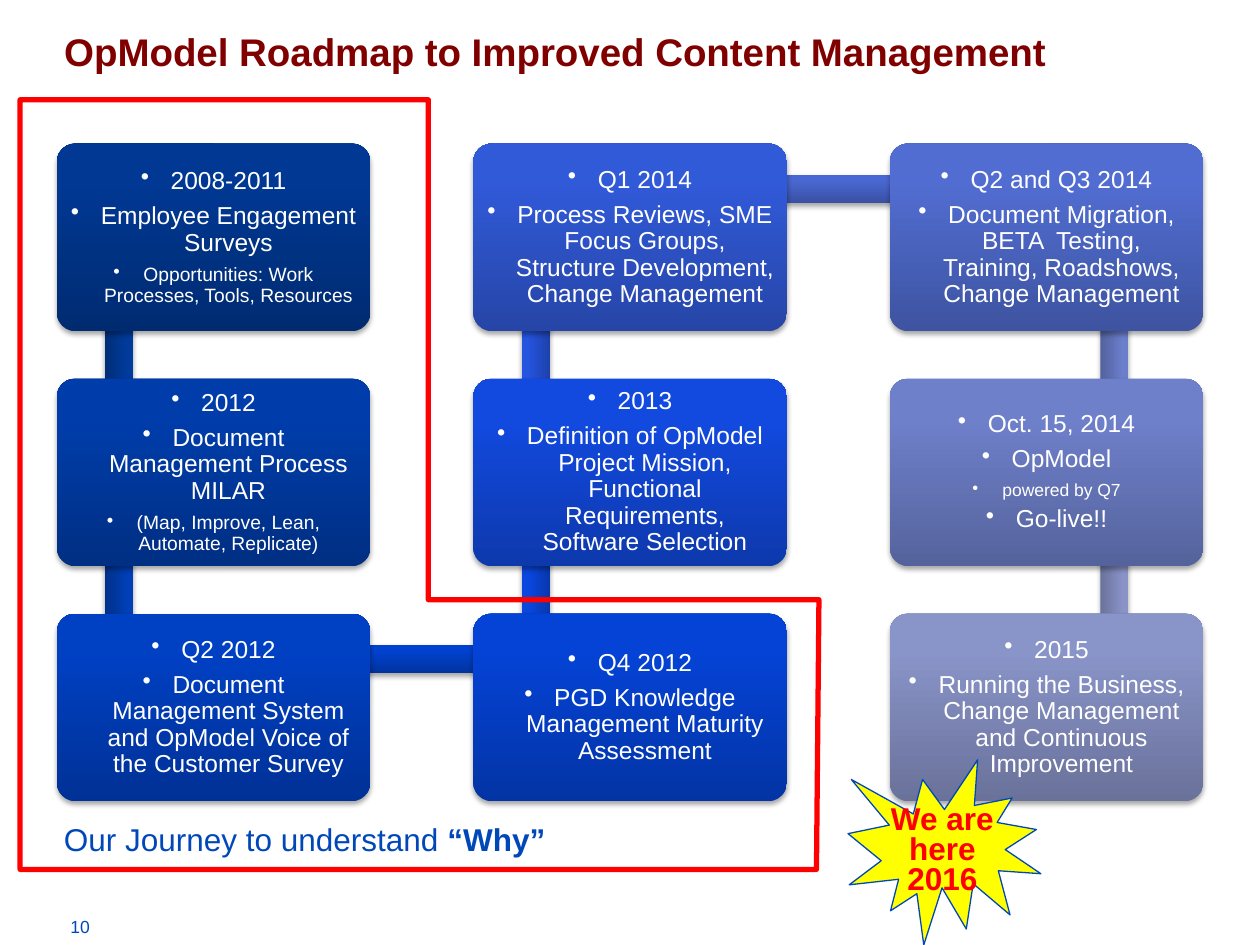
"""Build the roadmap slide of linked steps, a red outline and a star."""
import dataclasses
import typing

import lxml.etree
import pptx
import pptx.dml.color
import pptx.enum.shapes
import pptx.enum.text
import pptx.oxml.ns
import pptx.util

Pt = pptx.util.Pt
Kind = pptx.enum.shapes.MSO_SHAPE
Align = pptx.enum.text.PP_ALIGN
qn = pptx.oxml.ns.qn


@dataclasses.dataclass(frozen=True)
class Theme:
    font: str = "Arial"
    white: str = "FFFFFF"
    maroon: str = "800000"
    blue: str = "0048B9"
    red: str = "FF0000"
    yellow: str = "FFFF00"
    title: int = 22
    large: int = 18
    body: int = 14
    small: int = 11
    tiny: int = 10


THEME = Theme()
LEFT, TOP = 32.4, 82
ACROSS, DOWN = 238, 134.3
WIDE, HIGH = 179.3, 107.3
THICK = 16


class Line(typing.NamedTuple):
    text: str
    size: int = THEME.body


class Step(typing.NamedTuple):
    col: int
    row: int
    dark: str
    light: str
    lines: tuple[Line, ...]


class Bar(typing.NamedTuple):
    x: float
    y: float
    long: float
    turn: int
    dark: str
    light: str


BARS = (
    Bar(68, 175.7, 133.2, 90, "002E77", "003B9B"),
    Bar(68, 309.6, 133.2, 90, "00318B", "003FB5"),
    Bar(188, 376.6, 237.6, 0, "00339F", "0042CF"),
    Bar(306.4, 309.6, 133.2, 270, "0837AC", "0A47DF"),
    Bar(306.4, 175.7, 133.2, 270, "1D41AB", "2554DE"),
    Bar(425.5, 108, 237.6, 0, "3950A3", "4A68D3"),
    Bar(636.8, 181.4, 133.2, 90, "53619D", "6B7ECC"),
    Bar(636.8, 311, 133.2, 90, "6A719A", "8993C8"),
)

STEPS = (
    Step(0, 0, "002B71", "003893", (
        Line("2008-2011"), Line("Employee Engagement Surveys"),
        Line("Opportunities: Work Processes, Tools, Resources", THEME.small))),
    Step(0, 1, "002F83", "003DAB", (
        Line("2012"), Line("Document Management Process MILAR"),
        Line("(Map, Improve, Lean, Automate, Replicate)", THEME.small))),
    Step(0, 2, "003196", "0040C3", (
        Line("Q2 2012"),
        Line("Document Management System and OpModel Voice of the Customer Survey"))),
    Step(1, 2, "0334A5", "0443D6", (
        Line("Q4 2012"), Line("PGD Knowledge Management Maturity Assessment"))),
    Step(1, 1, "0E39AD", "124AE0", (
        Line("2013"),
        Line("Definition of OpModel Project Mission, Functional Requirements, "
             "Software Selection"))),
    Step(1, 0, "2645A7", "315AD9", (
        Line("Q1 2014"),
        Line("Process Reviews, SME Focus Groups, Structure Development, "
             "Change Management"))),
    Step(2, 0, "3E54A1", "516DD1", (
        Line("Q2 and Q3 2014"),
        Line("Document Migration, BETA  Testing, Training, Roadshows, "
             "Change Management"))),
    Step(2, 1, "55639C", "6F80CB", (
        Line("Oct. 15, 2014"), Line("OpModel"),
        Line("powered by Q7", THEME.tiny), Line("Go-live!!"))),
    Step(2, 2, "6A729A", "8994C8", (
        Line("2015"),
        Line("Running the Business, Change Management and Continuous Improvement"))),
)

EDGE = ((11.5, 57), (244.8, 57), (244.8, 342.7), (468, 342.7), (466.6, 496.8),
        (11.5, 496.8))


def color(code: str) -> pptx.dml.color.RGBColor:
    """Turn a hex code into a colour."""
    return pptx.dml.color.RGBColor.from_string(code)


def style(para, size: int, code: str, bold: bool = False) -> None:
    """Format every run of a paragraph."""
    for run in para.runs:
        font = run.font
        font.name, font.size, font.bold = THEME.font, Pt(size), bold
        font.color.rgb = color(code)


def shade(shape, dark: str, light: str) -> None:
    """Give a shape a rising gradient and a soft shadow."""
    shape.fill.gradient()
    shape.fill.gradient_angle = 90
    for stop, code, place in zip(shape.fill.gradient_stops, (dark, light), (0, 0.8)):
        stop.color.rgb = color(code)
        stop.position = place
    shape.line.fill.background()
    shape.shadow.inherit = False
    effects = shape._element.spPr.find(qn("a:effectLst"))
    outer = lxml.etree.SubElement(
        effects, qn("a:outerShdw"), blurRad=str(Pt(3.1)), dist=str(Pt(1.8)),
        dir="5400000", rotWithShape="0")
    black = lxml.etree.SubElement(outer, qn("a:srgbClr"), val="000000")
    lxml.etree.SubElement(black, qn("a:alpha"), val="35000")


def link(shapes, bar: Bar) -> None:
    """Draw one bar around its centre."""
    shape = shapes.add_shape(
        Kind.RECTANGLE, Pt(bar.x - bar.long / 2), Pt(bar.y - THICK / 2),
        Pt(bar.long), Pt(THICK))
    shape.rotation = bar.turn
    shade(shape, bar.dark, bar.light)


def card(shapes, step: Step) -> None:
    """Draw one step with its bulleted lines."""
    shape = shapes.add_shape(
        Kind.ROUNDED_RECTANGLE, Pt(LEFT + step.col * ACROSS),
        Pt(TOP + step.row * DOWN), Pt(WIDE), Pt(HIGH))
    shape.adjustments[0] = 0.1
    shade(shape, step.dark, step.light)
    frame = shape.text_frame
    frame.word_wrap = True
    frame.vertical_anchor = pptx.enum.text.MSO_ANCHOR.MIDDLE
    frame.margin_left = frame.margin_right = Pt(4.2)
    frame.margin_top = frame.margin_bottom = Pt(4.2)
    frame.text = "\n".join(line.text for line in step.lines)
    for para, line in zip(frame.paragraphs, step.lines):
        props = para._p.get_or_add_pPr()
        props.set("marL", str(Pt(17.1)))
        props.set("indent", str(-Pt(17.1)))
        lxml.etree.SubElement(props, qn("a:buChar"), char="•")
        para.alignment = Align.CENTER
        para.line_spacing = 0.9
        para.space_after = Pt(0.35 * line.size)
        style(para, line.size, THEME.white)


def label(shapes, box: tuple[float, ...], text: str, size: int, code: str,
          bold: bool = False, align=Align.LEFT, lead: float = 0.8):
    """Add a wrapped text box and return its paragraph."""
    frame = shapes.add_textbox(*map(Pt, box)).text_frame
    frame.word_wrap = True
    frame.text = text
    para = frame.paragraphs[0]
    para.alignment, para.line_spacing = align, lead
    style(para, size, code, bold)
    return para


def head(shape) -> None:
    """Place and format the title."""
    shape.left, shape.top, shape.width, shape.height = map(Pt, (29.5, 17.3, 650, 28.8))
    frame = shape.text_frame
    frame.text = "OpModel Roadmap to Improved Content Management"
    frame.word_wrap = True
    frame.auto_size = pptx.enum.text.MSO_AUTO_SIZE.NONE
    frame.vertical_anchor = pptx.enum.text.MSO_ANCHOR.TOP
    para = frame.paragraphs[0]
    para.alignment, para.line_spacing = Align.LEFT, 0.8
    style(para, THEME.title, THEME.maroon, True)


def outline(shapes) -> None:
    """Draw the red outline around the first steps."""
    first, *rest = [(Pt(x), Pt(y)) for x, y in EDGE]
    pen = shapes.build_freeform(*first)
    pen.add_line_segments(rest, close=True)
    shape = pen.convert_to_shape()
    shape.shadow.inherit = False
    shape.fill.background()
    shape.line.color.rgb = color(THEME.red)
    shape.line.width = Pt(3)


def star(shapes) -> None:
    """Draw the yellow star and its words."""
    shape = shapes.add_shape(Kind.EXPLOSION1, *map(Pt, (484.6, 434.2, 110.2, 105.8)))
    shape.shadow.inherit = False
    shape.fill.solid()
    shape.fill.fore_color.rgb = color(THEME.yellow)
    shape.line.color.rgb = color(THEME.blue)
    shape.line.width = Pt(0.75)
    label(shapes, (501, 457.2, 75, 59.8), "We are here 2016", THEME.large,
          THEME.red, True, Align.CENTER)


def main() -> None:
    """Build and save the slide."""
    deck = pptx.Presentation()
    deck.slide_width, deck.slide_height = Pt(720), Pt(540)
    slide = deck.slides.add_slide(deck.slide_layouts[5])
    shapes = slide.shapes
    head(shapes.title)
    label(shapes, (33.1, 519.8, 166.3, 19.4), "10", THEME.tiny, THEME.blue, lead=1)
    for bar in BARS:
        link(shapes, bar)
    for step in STEPS:
        card(shapes, step)
    outline(shapes)
    star(shapes)
    para = label(shapes, (29.5, 469.4, 412.6, 24.5), "Our Journey to understand ",
                 THEME.large, THEME.blue)
    para.add_run().text = "“Why”"
    style(para, THEME.large, THEME.blue)
    para.runs[-1].font.bold = True
    deck.save("out.pptx")


if __name__ == "__main__":
    main()
